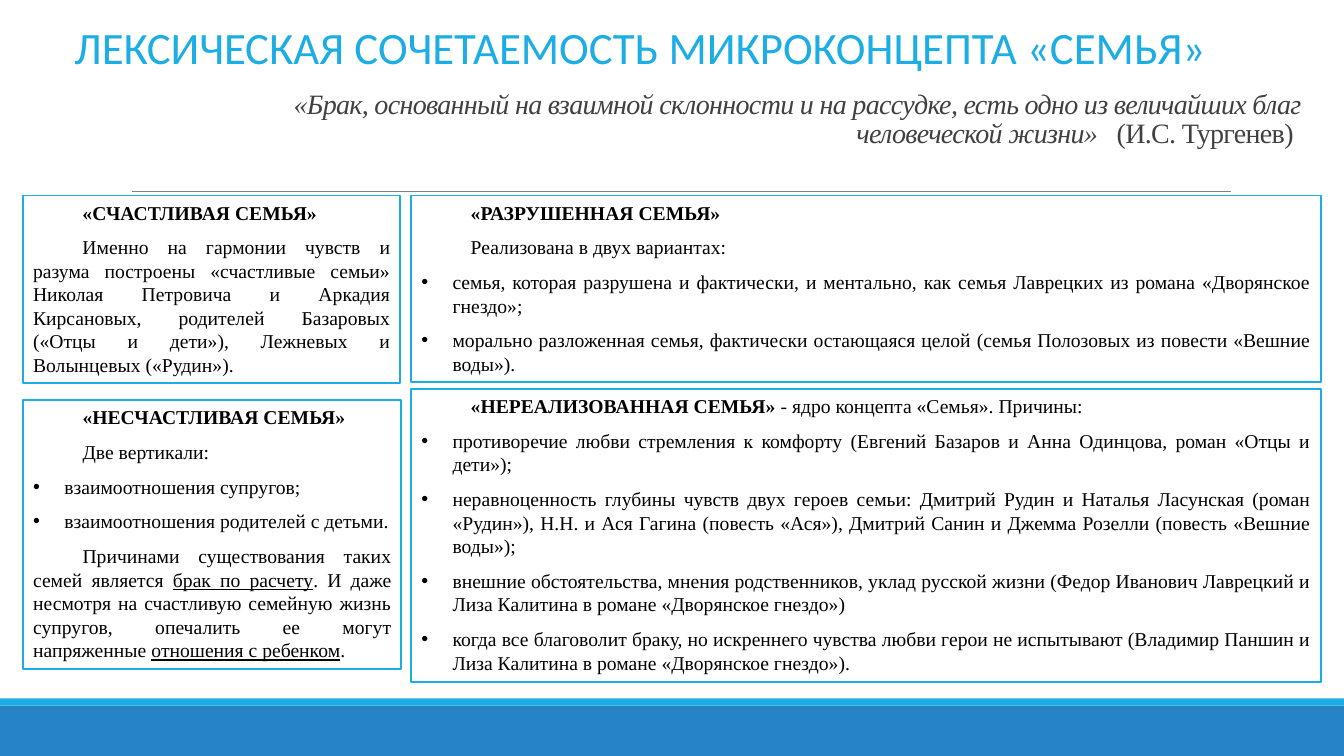
import pptx
import pptx.util
import pptx.dml.color
import pptx.enum.shapes
import pptx.enum.text
import pptx.oxml.ns
import lxml.etree

Inches = pptx.util.Inches
Pt = pptx.util.Pt
RGBColor = pptx.dml.color.RGBColor
Align = pptx.enum.text.PP_ALIGN
Anchor = pptx.enum.text.MSO_ANCHOR
AutoSize = pptx.enum.text.MSO_AUTO_SIZE
qn = pptx.oxml.ns.qn

CYAN = RGBColor(0x1C, 0xAD, 0xE4)
BLUE = RGBColor(0x26, 0x83, 0xC6)
GREY = RGBColor(0x80, 0x80, 0x80)
DARK = RGBColor(0x40, 0x40, 0x40)
BLACK = RGBColor(0, 0, 0)
WHITE = RGBColor(0xFF, 0xFF, 0xFF)

SERIF = "Times New Roman"
BODY = {"size": Pt(14), "name": SERIF}
QUOTE = {"size": Pt(20), "name": SERIF}
HEADING = {"size": Pt(32), "name": "Calibri"}
BOLD = {"bold": True}
UNDERLINE = {"underline": True}
ITALIC = {"italic": True}

WIDTH, HEIGHT = 13.33, 7.5
LEFT, RIGHT = 0.23, 4.08

PANELS = [
    ((LEFT, 1.94, 3.74, 1.86), [
        ("text", [("«СЧАСТЛИВАЯ СЕМЬЯ»", BOLD)]),
        ("text", [("Именно на гармонии чувств и разума построены «счастливые семьи» "
                   "Николая Петровича и Аркадия Кирсановых, родителей Базаровых "
                   "(«Отцы и дети»), Лежневых и Волынцевых («Рудин»).", {})]),
    ]),
    ((LEFT, 3.97, 3.75, 2.67), [
        ("text", [("«НЕСЧАСТЛИВАЯ СЕМЬЯ»", BOLD)]),
        ("text", [("Две вертикали:", {})]),
        ("bullet", [("взаимоотношения супругов;", {})]),
        ("bullet", [("взаимоотношения родителей с детьми.", {})]),
        ("text", [("Причинами существования таких семей является ", {}),
                  ("брак по расчету", UNDERLINE),
                  (". И даже несмотря на счастливую семейную жизнь супругов, "
                   "опечалить ее могут напряженные ", {}),
                  ("отношения с ребенком", UNDERLINE),
                  (".", {})]),
    ]),
    ((RIGHT, 1.94, 9.02, 1.85), [
        ("text", [("«РАЗРУШЕННАЯ СЕМЬЯ»", BOLD)]),
        ("text", [("Реализована в двух вариантах:", {})]),
        ("bullet", [("семья, которая разрушена и фактически, и ментально, как семья "
                     "Лаврецких из романа «Дворянское гнездо»;", {})]),
        ("bullet", [("морально разложенная семья, фактически остающаяся целой "
                     "(семья Полозовых из повести «Вешние воды»).", {})]),
    ]),
    ((RIGHT, 3.86, 9.02, 2.91), [
        ("text", [("«НЕРЕАЛИЗОВАННАЯ СЕМЬЯ» ", BOLD),
                  ("- ядро концепта «Семья». Причины:", {})]),
        ("bullet", [("противоречие любви стремления к комфорту (Евгений Базаров и "
                     "Анна Одинцова, роман «Отцы и дети»);", {})]),
        ("bullet", [("неравноценность глубины чувств двух героев семьи: Дмитрий Рудин "
                     "и Наталья Ласунская (роман «Рудин»), Н.Н. и Ася Гагина (повесть "
                     "«Ася»), Дмитрий Санин и Джемма Розелли (повесть «Вешние воды»);", {})]),
        ("bullet", [("внешние обстоятельства, мнения родственников, уклад русской жизни "
                     "(Федор Иванович Лаврецкий и Лиза Калитина в романе "
                     "«Дворянское гнездо»)", {})]),
        ("bullet", [("когда все благоволит браку, но искреннего чувства любви герои не "
                     "испытывают (Владимир Паншин и Лиза Калитина в романе "
                     "«Дворянское гнездо»).", {})]),
    ]),
]


def apply(target, values):
    """Set every attribute named in values on the target."""
    for name, value in values.items():
        setattr(target, name, value)


def add_span(para, text, values, color):
    """Append a formatted run to the paragraph and return it."""
    span = para.add_run()
    span.text = text
    apply(span.font, values)
    span.font.color.rgb = color
    return span


def indent(para, kind):
    """Give the paragraph a first-line indent or a hanging bullet."""
    margin, first = {"text": (0, 0.49), "bullet": (0.31, -0.31)}[kind]
    properties = para._p.get_or_add_pPr()
    properties.set("marL", str(Inches(margin)))
    properties.set("indent", str(Inches(first)))
    if kind == "bullet":
        font = lxml.etree.SubElement(properties, qn("a:buFont"))
        font.set("typeface", "Arial")
        lxml.etree.SubElement(properties, qn("a:buChar")).set("char", "•")


def add_rectangle(page, box, fill):
    """Draw a plain filled rectangle without an outline."""
    shape = page.shapes.add_shape(
        pptx.enum.shapes.MSO_SHAPE.RECTANGLE, *map(Inches, box))
    shape.shadow.inherit = False
    shape.fill.solid()
    shape.fill.fore_color.rgb = fill
    shape.line.fill.background()
    return shape


def add_backdrop(page, box):
    """Draw the footer bands and the rule under the quotation."""
    left, top, width, height = box
    add_rectangle(page, (left, top + height - 0.5, width, 0.5), BLUE)
    add_rectangle(page, (left, top + height - 0.57, width, 0.07), CYAN)
    rule = page.shapes.add_connector(
        pptx.enum.shapes.MSO_CONNECTOR.STRAIGHT,
        *map(Inches, (left + 1.31, top + 1.9, left + 12.21, top + 1.9)))
    rule.line.color.rgb = GREY
    rule.line.width = Pt(0.5)
    lxml.etree.SubElement(rule._element.spPr, qn("a:effectLst"))


def add_quote(page, box):
    """Write the right-aligned quotation with its author."""
    frame = page.shapes.add_textbox(*map(Inches, box)).text_frame
    apply(frame, {"word_wrap": True, "vertical_anchor": Anchor.BOTTOM})
    para = frame.paragraphs[0]
    apply(para, {"alignment": Align.RIGHT, "line_spacing": 0.85})
    spans = [
        ("«Брак, основанный на взаимной склонности и на рассудке, есть одно из "
         "величайших благ человеческой жизни»", ITALIC, -50),
        (" ", ITALIC, 850),
        ("(И.С. Тургенев) ", {}, -50),
    ]
    for text, values, spacing in spans:
        span = add_span(para, text, QUOTE | values, DARK)
        span._r.get_or_add_rPr().set("spc", str(spacing))


def add_heading(page, box):
    """Write the slide heading."""
    frame = page.shapes.add_textbox(*map(Inches, box)).text_frame
    apply(frame, {"word_wrap": True, "auto_size": AutoSize.SHAPE_TO_FIT_TEXT})
    add_span(frame.paragraphs[0], "ЛЕКСИЧЕСКАЯ СОЧЕТАЕМОСТЬ МИКРОКОНЦЕПТА «СЕМЬЯ»",
             HEADING, CYAN)


def add_panel(page, box, paragraphs):
    """Draw an outlined panel holding justified paragraphs and bullets."""
    shape = add_rectangle(page, box, WHITE)
    shape.line.color.rgb = CYAN
    shape.line.width = Pt(1.25)
    frame = shape.text_frame
    apply(frame, {"word_wrap": True, "vertical_anchor": Anchor.TOP,
                  "auto_size": AutoSize.SHAPE_TO_FIT_TEXT})
    for number, (kind, spans) in enumerate(paragraphs):
        para = frame.add_paragraph() if number else frame.paragraphs[0]
        apply(para, {"alignment": Align.JUSTIFY, "space_after": Pt(8),
                     "line_spacing": 1.0})
        indent(para, kind)
        for text, values in spans:
            add_span(para, text, BODY | values, BLACK)


def main():
    """Build the slide and save the deck."""
    deck = pptx.Presentation()
    apply(deck, {"slide_width": Inches(WIDTH), "slide_height": Inches(HEIGHT)})
    page = deck.slides.add_slide(deck.slide_layouts[6])
    add_backdrop(page, (0, 0, WIDTH, HEIGHT))
    add_quote(page, (2.1, 0.79, 10.89, 0.74))
    add_heading(page, (0.64, 0.15, 12.24, 0.64))
    for box, paragraphs in PANELS:
        add_panel(page, box, paragraphs)
    deck.save("out.pptx")


if __name__ == "__main__":
    main()
